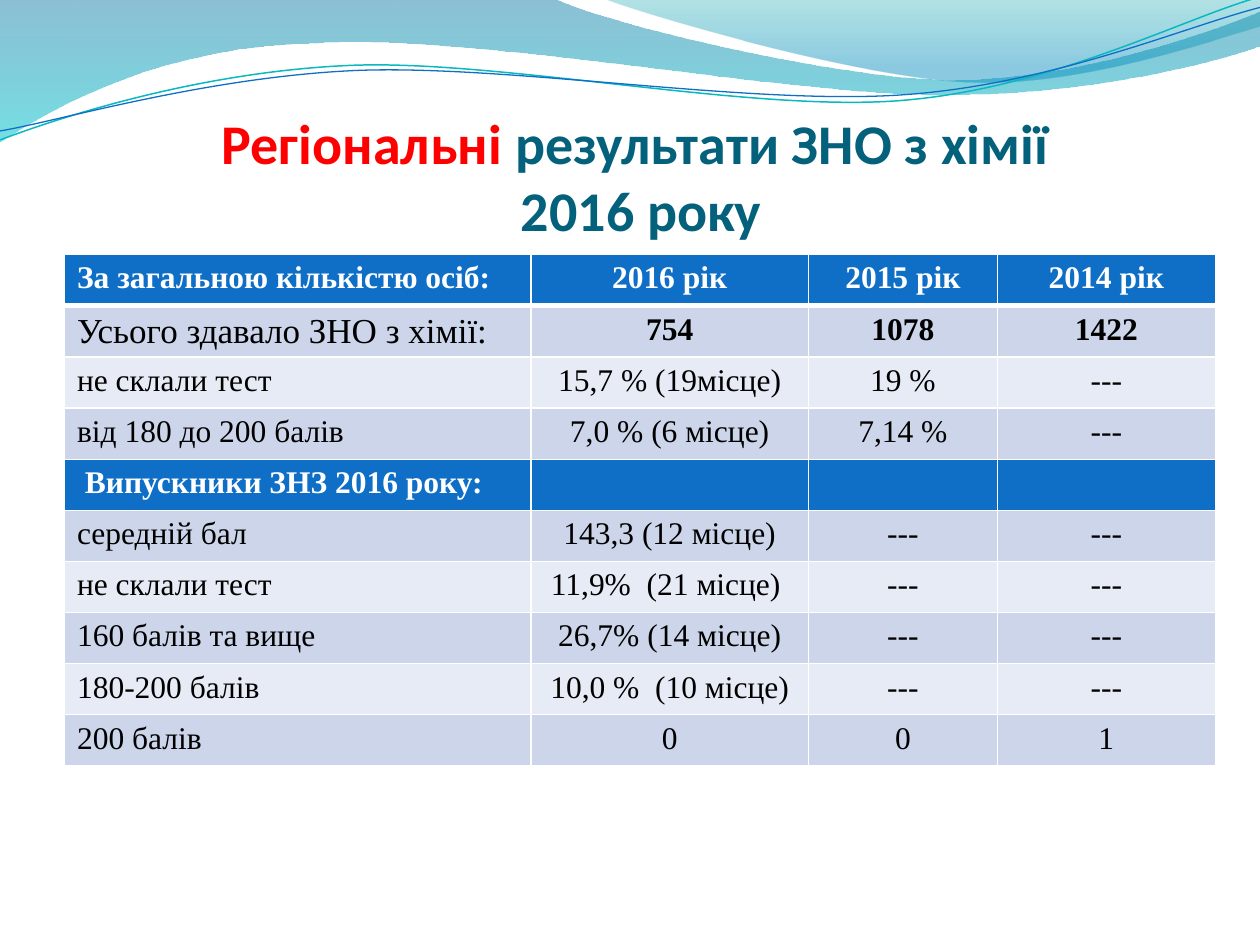
from math import cos, radians, sin

from lxml import etree
from pptx import Presentation
from pptx.dml.color import RGBColor
from pptx.enum.text import MSO_ANCHOR, MSO_AUTO_SIZE, PP_ALIGN
from pptx.oxml import parse_xml
from pptx.oxml.ns import qn
from pptx.util import Cm, Pt

CENTER, LEFT = PP_ALIGN.CENTER, PP_ALIGN.LEFT
BOTTOM = MSO_ANCHOR.BOTTOM
NO_AUTOFIT = MSO_AUTO_SIZE.NONE
NS = "http://schemas.openxmlformats.org/drawingml/2006/main"

BLUE, BAND_DARK, BAND_LIGHT = "0F6FC6", "CCD5EA", "E7EBF5"
WHITE, BLACK, RED, TEAL = "FFFFFF", "000000", "FF0000", "04617B"
CURVE_TILT = -2.7
CURVE_CENTER = (12.68, 1.48)

# Outlines in cm: a pair is a straight segment's end, six numbers are a Bézier segment.
BROAD_WAVE = [
    (0, 0), (11.18, -0.03),
    (12.09, 0.43, 16.87, 1.6, 19.25, 1.6),
    (21.67, 1.6, 24.33, 0.66, 25.4, 0.23),
    (25.43, 0.91),
    (24.97, 1.12, 22.1, 1.93, 18.95, 1.91),
    (15.8, 1.91, 9.7, 0.71, 6.53, 0.86),
    (3.25, 0.91, 1.17, 2.11, -0.03, 2.87),
    (0, 0),
]
RIGHT_WAVE = [
    (12.17, -0.03),
    (12.93, 0.28, 17.32, 1.57, 19.53, 1.65),
    (21.74, 1.75, 24.41, 0.81, 25.4, 0.53),
    (25.4, 0), (12.17, -0.03),
]
TEAL_CURVE = [
    (0, 2.82),
    (1.22, 2.36, 4.01, 1.45, 7.04, 1.32),
    (10.03, 1.19, 15.06, 2.26, 18.11, 2.03),
    (21.16, 1.8, 23.83, 0.38, 25.35, -0.05),
]
BLUE_CURVE = [
    (0, 2.64),
    (1.19, 2.44, 4.17, 1.55, 7.19, 1.42),
    (10.24, 1.3, 15.16, 2.13, 18.21, 1.91),
    (21.23, 1.7, 23.9, 0.53, 25.4, 0.15),
]

ROWS = [
    ("За загальною кількістю осіб:", "2016 рік", "2015 рік", "2014 рік"),
    ("Усього здавало ЗНО з хімії:", "754", "1078", "1422"),
    ("не склали тест", "15,7 % (19місце)", "19 %", "---"),
    ("від 180 до 200 балів", "7,0 % (6 місце)", "7,14 %", "---"),
    (" Випускники ЗНЗ 2016 року:", "", "", ""),
    ("середній бал", "143,3 (12 місце)", "---", "---"),
    ("не склали тест", "11,9%  (21 місце) ", "---", "---"),
    ("160 балів та вище", "26,7% (14 місце)", "---", "---"),
    ("180-200 балів", "10,0 %  (10 місце)", "---", "---"),
    ("200 балів", "0", "0", "1"),
]
COLUMN_SHARES = (9.4, 5.59, 3.81, 4.39)
HEADING_ROWS = (0, 4)
TOTAL_ROW = 1


def rgb(value):
    return RGBColor.from_string(value)


def format_run(r, font, size, color, bold):
    r.font.name, r.font.size, r.font.bold = font, Pt(size), bold
    r.font.color.rgb = rgb(color)


def turn(x, y, angle):
    """Turn a point clockwise around the centre of the curves."""
    cx, cy = CURVE_CENTER
    c, s = cos(radians(angle)), sin(radians(angle))
    return cx + (x - cx) * c - (y - cy) * s, cy + (x - cx) * s + (y - cy) * c


def add_outline(slide, left, top, outline, close, tilt=0):
    """Draw the outline; a tilted one is straightened first, then rotated as a shape."""
    segments = []
    for numbers in outline:
        pairs = [turn(x, y, -tilt) for x, y in zip(numbers[::2], numbers[1::2])]
        segments.append([(left + Cm(x), top + Cm(y)) for x, y in pairs])
    builder = slide.shapes.build_freeform(*segments[0][-1])
    builder.add_line_segments([pairs[-1] for pairs in segments[1:]], close=close)
    sp = builder.convert_to_shape()
    sp.shadow.inherit = False
    lines = list(sp.element.iter(qn("a:lnTo")))
    for line, pairs in zip(lines, segments[1:]):
        if len(pairs) == 3:
            line.getparent().replace(line, bezier(sp, pairs))
    sp.rotation = tilt
    return sp


def bezier(sp, pairs):
    points = "".join(f'<a:pt x="{x - sp.left}" y="{y - sp.top}"/>' for x, y in pairs)
    return parse_xml(f'<a:cubicBezTo xmlns:a="{NS}">{points}</a:cubicBezTo>')


def fill_gradient(sp, stops):
    """Fill downwards with stops of (position %, colour, opacity %)."""
    sp.fill.background()
    marks = "".join(
        f'<a:gs pos="{pos * 1000}"><a:srgbClr val="{color}">'
        f'<a:alpha val="{opacity * 1000}"/></a:srgbClr></a:gs>'
        for pos, color, opacity in stops)
    gradient = parse_xml(f'<a:gradFill xmlns:a="{NS}" rotWithShape="1"><a:gsLst>{marks}'
                         '</a:gsLst><a:lin ang="5400000" scaled="0"/></a:gradFill>')
    sp_pr = sp.element.spPr
    sp_pr.replace(sp_pr.find(qn("a:noFill")), gradient)


def add_waves(slide, left, top):
    for outline, stops in (
        (BROAD_WAVE, [(0, "0074A1", 45), (100, "00C6CF", 55)]),
        (RIGHT_WAVE, [(0, "00A1A9", 30), (80, "008BBF", 45)]),
    ):
        sp = add_outline(slide, left, top, outline, True)
        fill_gradient(sp, stops)
        sp.line.fill.background()
    for outline, color, width in ((TEAL_CURVE, "0AB8BF", 0.85), (BLUE_CURVE, BLUE, 0.75)):
        sp = add_outline(slide, left, top, outline, False, CURVE_TILT)
        sp.fill.background()
        sp.line.color.rgb = rgb(color)
        sp.line.width = Pt(width)


def place_title(slide, left, top, width, height):
    title = slide.shapes.title
    title.left, title.top, title.width, title.height = left, top, width, height
    tf = title.text_frame
    tf.auto_size, tf.vertical_anchor = NO_AUTOFIT, BOTTOM
    tf.margin_left = tf.margin_right = tf.margin_bottom = 0
    p = tf.paragraphs[0]
    p.text = "Регіональні"
    p.alignment = CENTER
    p.add_run().text = " результати ЗНО з хімії "
    p.add_line_break()
    p.add_run().text = "2016 року"
    for r, color in zip(p.runs, (RED, TEAL, TEAL)):
        format_run(r, "Calibri", 32, color, True)
    slide.shapes._spTree.append(title.element)  # bring in front of the waves


def set_borders(cell, widths):
    tc_pr = cell._tc.get_or_add_tcPr()
    for side, width in zip("LRTB", widths):
        ln = etree.SubElement(tc_pr, qn(f"a:ln{side}"), w=str(Pt(width)))
        fill = etree.SubElement(ln, qn("a:solidFill"))
        etree.SubElement(fill, qn("a:srgbClr"), val=WHITE)


def format_cell(cell, row, col):
    heading = row in HEADING_ROWS
    set_borders(cell, (1, 1, 3 if row == 1 else 1, 3 if row == 0 else 1))
    cell.fill.solid()
    cell.fill.fore_color.rgb = rgb(BLUE if heading else BAND_DARK if row % 2 else BAND_LIGHT)
    p = cell.text_frame.paragraphs[0]
    p.alignment = CENTER if col else LEFT
    size = 20 if row == TOTAL_ROW and col == 0 else 18
    bold = heading or (row == TOTAL_ROW and col > 0)
    for r in p.runs:
        format_run(r, "Times New Roman", size, WHITE if heading else BLACK, bold)


def add_results_table(slide, left, top, width, height):
    table = slide.shapes.add_table(len(ROWS), len(COLUMN_SHARES), left, top, width, height).table
    table.first_row = table.horz_banding = False
    for column, share in zip(table.columns, COLUMN_SHARES):
        column.width = int(width * share / sum(COLUMN_SHARES))
    for i, texts in enumerate(ROWS):
        for j, text in enumerate(texts):
            cell = table.cell(i, j)
            cell.text = text
            format_cell(cell, i, j)


def main():
    prs = Presentation()
    prs.slide_width, prs.slide_height = Cm(25.4), Cm(19.05)
    slide = prs.slides.add_slide(prs.slide_layouts[5])
    add_waves(slide, Cm(0), Cm(0))
    place_title(slide, Cm(1.5), Cm(1.92), Cm(22.86), Cm(2.97))
    add_results_table(slide, Cm(1.3), Cm(5.13), Cm(23.2), Cm(10.3))
    prs.save("out.pptx")


if __name__ == "__main__":
    main()
